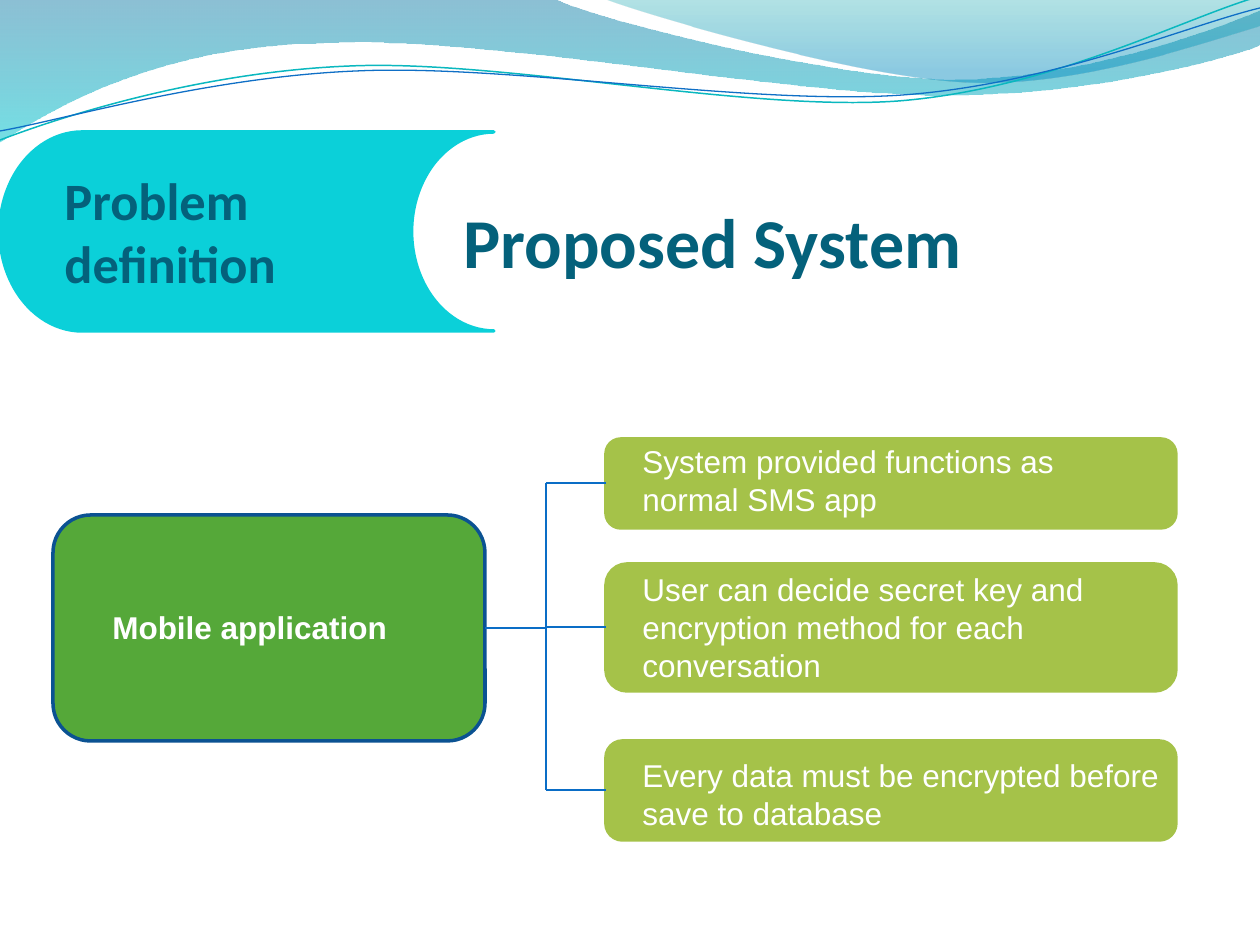
"""Build the Proposed System slide: wave header, section tab and application feature tree."""
import pptx
import pptx.dml.color
import pptx.enum.shapes
import pptx.enum.text
import pptx.oxml
import pptx.oxml.ns
import pptx.util

PX = 914400 / 126
COLORS = {
    "white": "FFFFFF", "title": "04617B", "tab": "0BD0D9", "root": "55A839",
    "root_line": "0B5292", "feature": "A5C249", "link": "0A6DC6",
    "teal": "0AB8BF", "blue": "0F6FC6", "wave_top": "0074A1",
    "wave_bottom": "00C6CF", "crest_top": "00A1A9", "crest_bottom": "008BBF",
}
TITLE = ("Proposed System", (451, 192, 767, 136))
TAB = ("Problem definition", (0, 132, 494, 199), (52, 162, 336, 140))
ROOT = ("Mobile application", (53, 515, 432, 226), (100, 602, 339, 50))
FEATURES = [
    ("System provided functions as normal SMS app", (606, 439, 570, 89), (630, 436, 540, 127)),
    ("User can decide secret key and encryption method for each conversation",
     (606, 564, 570, 127), (630, 564, 543, 165)),
    ("Every data must be encrypted before save to database",
     (606, 741, 570, 99), (630, 750, 546, 127)),
]
TRUNK_X = 546
FORMATS = {
    "title": {"name": "Calibri", "size": pptx.util.Pt(40), "bold": True},
    "tab": {"name": "Calibri", "size": pptx.util.Pt(30), "bold": True},
    "root": {"name": "Arial", "size": pptx.util.Pt(18), "bold": True},
    "feature": {"name": "Arial", "size": pptx.util.Pt(18), "bold": False},
}
FONT_COLORS = {"title": "title", "tab": "title", "root": "white", "feature": "white"}
WAVES = [
    ((0, 0), [
        [(554, -1)],
        [(600, 21), (837, 79), (955, 79)],
        [(1075, 79), (1207, 33), (1260, 11)],
        [(1261, 45)],
        [(1239, 55), (1096, 96), (940, 95)],
        [(784, 95), (481, 35), (324, 43)],
        [(163, 45), (58, 105), (-1, 142)],
    ], [(0, "wave_top", 45), (1, "wave_bottom", 55)]),
    ((604, -1), [
        [(641, 14), (859, 78), (969, 82)],
        [(1079, 87), (1211, 40), (1260, 26)],
        [(1260, 0)],
    ], [(0, "crest_top", 30), (0.8, "crest_bottom", 45)]),
]
STRANDS = [
    ((0, 140), [
        [(60, 117), (199, 72), (349, 66)],
        [(498, 59), (747, 112), (898, 101)],
        [(1050, 89), (1182, 19), (1257, -3)],
    ], "teal", 0.85),
    ((0, 131), [
        [(59, 121), (207, 77), (357, 71)],
        [(508, 64), (752, 106), (903, 95)],
        [(1053, 84), (1186, 26), (1260, 8)],
    ], "blue", 0.75),
]
SHAPE = pptx.enum.shapes.MSO_SHAPE


def emu(*values):
    return [round(v * PX) for v in values]


def rgb(name):
    return pptx.dml.color.RGBColor.from_string(COLORS[name])


def element(tag, attributes=""):
    return pptx.oxml.parse_xml(f'<a:{tag} {pptx.oxml.ns.nsdecls("a")} {attributes}/>')


def set_line(sp, color, width):
    sp.line.color.rgb = rgb(color)
    sp.line.width = pptx.util.Pt(width)


def add_curve(slide, start, segments, close):
    builder = slide.shapes.build_freeform(*start, scale=PX)
    builder.add_line_segments([pt for seg in segments for pt in seg], close=close)
    sp = builder.convert_to_shape()
    sp.shadow.inherit = False
    steps = iter(list(sp.element.iter(pptx.oxml.ns.qn("a:lnTo"))))
    for seg in segments:
        group = [next(steps) for _ in seg]
        if len(group) == 3:
            bezier = element("cubicBezTo")
            group[0].addprevious(bezier)
            for step in group:
                bezier.append(step[0])
                step.getparent().remove(step)
    return sp


def add_wave(slide, start, segments, stops):
    sp = add_curve(slide, start, segments, True)
    sp.line.fill.background()
    sp.fill.gradient()
    sp.fill.gradient_angle = 270
    for stop, (position, color, _) in zip(sp.fill.gradient_stops, stops):
        stop.position = position
        stop.color.rgb = rgb(color)
    tints = sp.element.spPr.iter(pptx.oxml.ns.qn("a:srgbClr"))
    for tint, (_, _, opacity) in zip(list(tints), stops):
        tint.append(element("alpha", f'val="{opacity * 1000}"'))


def add_strand(slide, start, segments, color, width):
    sp = add_curve(slide, start, segments, False)
    sp.fill.background()
    set_line(sp, color, width)


def add_block(slide, kind, box, fill, line):
    sp = slide.shapes.add_shape(kind, *emu(*box))
    sp.shadow.inherit = False
    sp.fill.solid()
    sp.fill.fore_color.rgb = rgb(fill)
    set_line(sp, line, 2)


def write(sp, text, box, style):
    sp.left, sp.top, sp.width, sp.height = emu(*box)
    tf = sp.text_frame
    frame = {"word_wrap": True, "auto_size": pptx.enum.text.MSO_AUTO_SIZE.NONE,
             "vertical_anchor": pptx.enum.text.MSO_ANCHOR.TOP}
    for key, value in frame.items():
        setattr(tf, key, value)
    p = tf.paragraphs[0]
    p.alignment = pptx.enum.text.PP_ALIGN.LEFT
    r = p.add_run()
    r.text = text
    for key, value in FORMATS[style].items():
        setattr(r.font, key, value)
    r.font.color.rgb = rgb(FONT_COLORS[style])


def add_text(slide, text, box, style):
    write(slide.shapes.add_textbox(*emu(*box)), text, box, style)


def add_link(slide, *ends):
    sp = slide.shapes.add_connector(pptx.enum.shapes.MSO_CONNECTOR.STRAIGHT, *emu(*ends))
    set_line(sp, "link", 1)
    sp.element.spPr.append(element("effectLst"))


def middle(box):
    return box[1] + box[3] // 2


def main():
    prs = pptx.Presentation()
    prs.slide_width, prs.slide_height = emu(1260, 945)
    slide = prs.slides.add_slide(prs.slide_layouts[5])
    for wave in WAVES:
        add_wave(slide, *wave)
    for strand in STRANDS:
        add_strand(slide, *strand)

    text, root, label = ROOT
    add_block(slide, SHAPE.ROUNDED_RECTANGLE, root, "root", "root_line")
    add_text(slide, text, label, "root")
    for text, box, label in FEATURES:
        add_block(slide, SHAPE.ROUNDED_RECTANGLE, box, "feature", "feature")
        add_text(slide, text, label, "feature")

    levels = [middle(box) for _, box, _ in FEATURES]
    add_link(slide, root[0] + root[2], middle(root), TRUNK_X, middle(root))
    add_link(slide, TRUNK_X, levels[0], TRUNK_X, levels[-1])
    for (_, box, _), y in zip(FEATURES, levels):
        add_link(slide, TRUNK_X, y, box[0], y)

    text, box, label = TAB
    add_block(slide, SHAPE.FLOWCHART_STORED_DATA, box, "tab", "tab")
    add_text(slide, text, label, "tab")
    write(slide.shapes.title, *TITLE, "title")
    prs.save("out.pptx")


if __name__ == "__main__":
    main()
